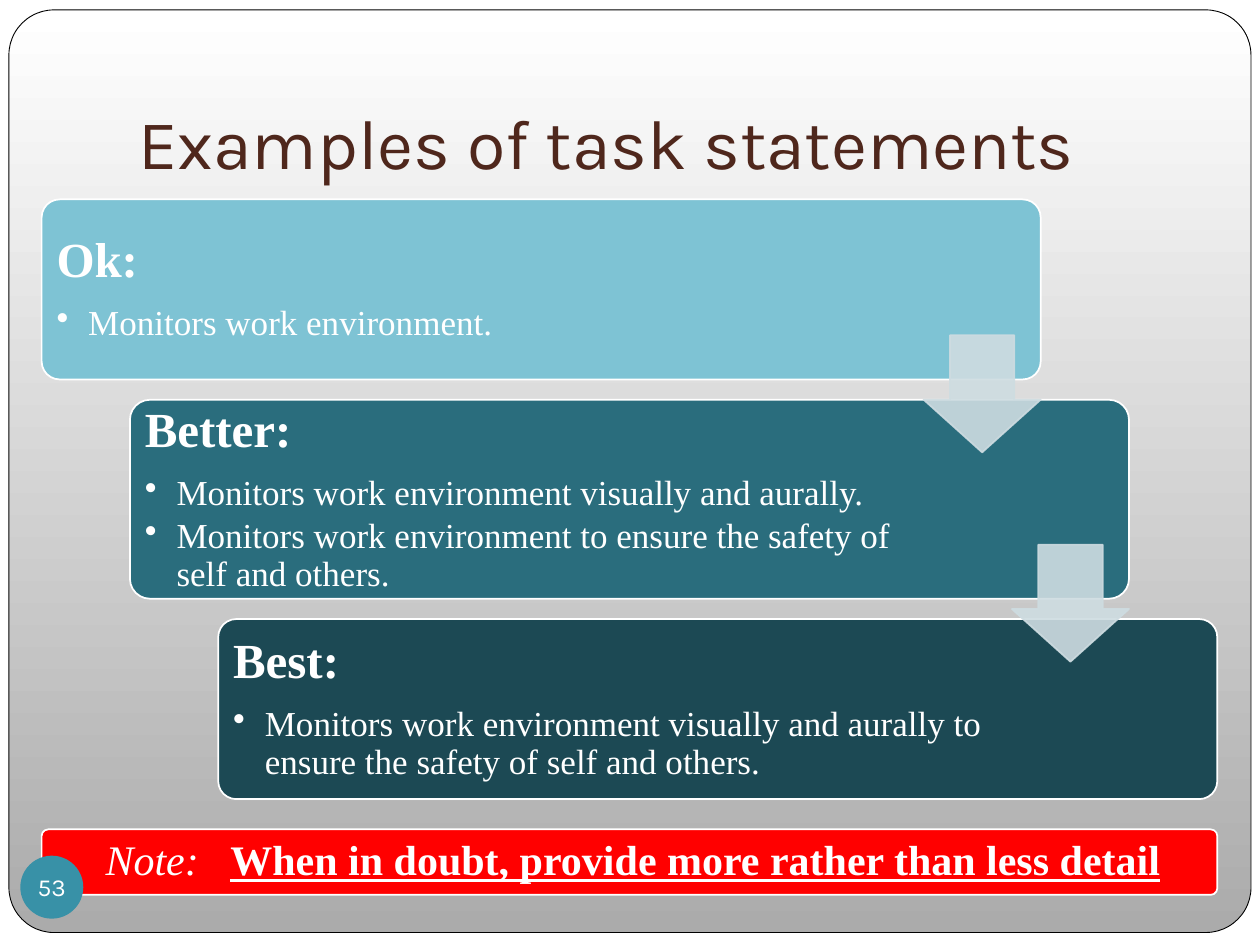
from lxml.etree import SubElement
from pptx import Presentation
from pptx.dml.color import RGBColor
from pptx.enum.shapes import MSO_SHAPE as Shape
from pptx.enum.text import MSO_ANCHOR as Anchor, PP_ALIGN as Align
from pptx.oxml.ns import qn
from pptx.util import Cm, Pt

COLORS = {
    "white": "FFFFFF", "black": "000000", "title": "4F271C",
    "ok": "7EC3D4", "better": "2A6D7D", "best": "1C4954",
    "arrow": "CEDCE1", "note": "FF0000", "badge": "3891A7",
    "shade_low": "ABABAB", "shade_high": "FFFFFF",
}
HEAD_FONT, BODY_FONT = "Karla", "Times New Roman"

LEVELS = [
    ("ok", "Ok:", ["Monitors work environment."], 3.63, 16.46, 2.74),
    ("better", "Better:", [
        "Monitors work environment visually and aurally.",
        "Monitors work environment to ensure the safety of self and others.",
    ], 4.01, 16.03, 2.92),
    ("best", "Best:", [
        "Monitors work environment visually and aurally to ensure the safety of self and others.",
    ], 3.63, 16.03, None),
]


def color(key):
    return RGBColor.from_string(COLORS[key])


def add_block(slide, kind, box, fill=None, line=None, weight=1, adjust=()):
    block = slide.shapes.add_shape(kind, *map(Cm, box))
    block.shadow.inherit = False
    for index, value in enumerate(adjust):
        block.adjustments[index] = value
    if fill:
        block.fill.solid()
        block.fill.fore_color.rgb = color(fill)
    if line:
        block.line.color.rgb = color(line)
        block.line.width = Pt(weight)
    else:
        block.line.fill.background()
    return block


def set_frame(frame, inset, anchor=Anchor.MIDDLE, wrap=True):
    frame.word_wrap = wrap
    frame.vertical_anchor = anchor
    frame.margin_left = frame.margin_right = Cm(inset)
    frame.margin_top = frame.margin_bottom = Cm(inset)


def add_text_area(slide, box, inset):
    frame = slide.shapes.add_textbox(*map(Cm, box)).text_frame
    set_frame(frame, inset)
    return frame


def add_run(paragraph, text, size, font=BODY_FONT, ink="white",
            bold=False, italic=False, underline=False):
    run = paragraph.add_run()
    run.text = text
    run.font.size = Pt(size)
    run.font.name = font
    run.font.color.rgb = color(ink)
    run.font.bold = bold
    run.font.italic = italic
    run.font.underline = underline
    return run


def set_spacing(paragraph, after):
    paragraph.line_spacing = 0.9
    paragraph.space_before = Pt(0)
    paragraph.space_after = Pt(after)


def add_bullet(paragraph):
    properties = paragraph._p.get_or_add_pPr()
    properties.set("marL", str(Cm(0.64)))
    properties.set("indent", str(-Cm(0.64)))
    SubElement(properties, qn("a:buChar")).set("char", "•")


def add_backdrop(slide, box):
    slide.background.fill.solid()
    slide.background.fill.fore_color.rgb = color("white")
    panel = add_block(slide, Shape.ROUNDED_RECTANGLE, box,
                      line="black", weight=0.5, adjust=[0.049])
    panel.fill.gradient()
    panel.fill.gradient_angle = 90
    stops = panel.fill.gradient_stops
    for stop, key in zip(stops, ("shade_low", "shade_high")):
        stop.color.rgb = color(key)
    stops[0].position, stops[1].position = 0, 1
    slide.shapes._spTree.insert(2, panel._element)


def add_title(slide, box):
    title = slide.shapes.title
    title.left, title.top, title.width, title.height = map(Cm, box)
    frame = title.text_frame
    set_frame(frame, 0.25, Anchor.BOTTOM)
    frame.margin_top = Cm(0.13)
    heading = frame.paragraphs[0]
    heading.alignment = Align.LEFT
    add_run(heading, "Examples of task statements", 40, HEAD_FONT, "title")


def add_card(slide, box, text_width, fill, heading, examples):
    left, top, _, height = box
    add_block(slide, Shape.ROUNDED_RECTANGLE, box, fill, "white", adjust=[0.1])
    frame = add_text_area(slide, (left, top, text_width, height), 0.3)
    label = frame.paragraphs[0]
    set_spacing(label, 10)
    add_run(label, heading, 28, bold=True)
    for example in examples:
        item = frame.add_paragraph()
        set_spacing(item, 3)
        add_bullet(item)
        add_run(item, example, 20)


def add_arrow(slide, box):
    arrow = add_block(slide, Shape.DOWN_ARROW, box, "arrow", "arrow",
                      adjust=[0.55, 0.45])
    for tint in arrow._element.spPr.iter(qn("a:srgbClr")):
        SubElement(tint, qn("a:alpha")).set("val", "90000")


def add_staircase(slide, box):
    left, top, width, _ = box
    step, gap, card_width, arrow_size = 1.78, 0.41, width - 2 * 1.78, 2.36
    arrow_boxes = []
    for index, (fill, heading, examples, height, text_width, drop) in enumerate(LEVELS):
        card_left = left + index * step
        add_card(slide, (card_left, top, card_width, height),
                 text_width, fill, heading, examples)
        if drop:
            arrow_left = card_left + card_width - arrow_size
            arrow_boxes.append((arrow_left, top + drop, arrow_size, arrow_size))
        top += height + gap
    for arrow_box in arrow_boxes:
        add_arrow(slide, arrow_box)


def add_note(slide, box):
    left, top, width, height = box
    add_block(slide, Shape.ROUNDED_RECTANGLE, box, "note", "white", adjust=[0.1])
    frame = add_text_area(slide, (left + 0.12, top + 0.04, width - 0.1, height - 0.08), 0.2)
    advice = frame.paragraphs[0]
    advice.alignment = Align.CENTER
    set_spacing(advice, 0)
    add_run(advice, "Note:", 24, italic=True)
    spacer = add_run(advice, " ", 24, italic=True)
    spacer.font._element.set("spc", "1200")
    add_run(advice, "When in doubt, provide more rather than less detail", 24,
            bold=True, underline=True)


def add_page_badge(slide, box):
    frame = add_block(slide, Shape.OVAL, box, "badge").text_frame
    set_frame(frame, 0, wrap=False)
    number = frame.paragraphs[0]
    number.alignment = Align.CENTER
    add_run(number, "53", 14, HEAD_FONT)


def main():
    deck = Presentation()
    deck.slide_width, deck.slide_height = Cm(25.4), Cm(19.05)
    slide = deck.slides.add_slide(deck.slide_layouts[5])
    add_backdrop(slide, (0.18, 0.2, 25.04, 18.6))
    add_title(slide, (2.54, 0.76, 21.59, 3.18))
    add_staircase(slide, (0.84, 4.02, 23.7, 12.09))
    add_note(slide, (0.84, 16.72, 23.7, 1.32))
    add_page_badge(slide, (0.41, 17.25, 1.27, 1.27))
    deck.save("out.pptx")


if __name__ == "__main__":
    main()
